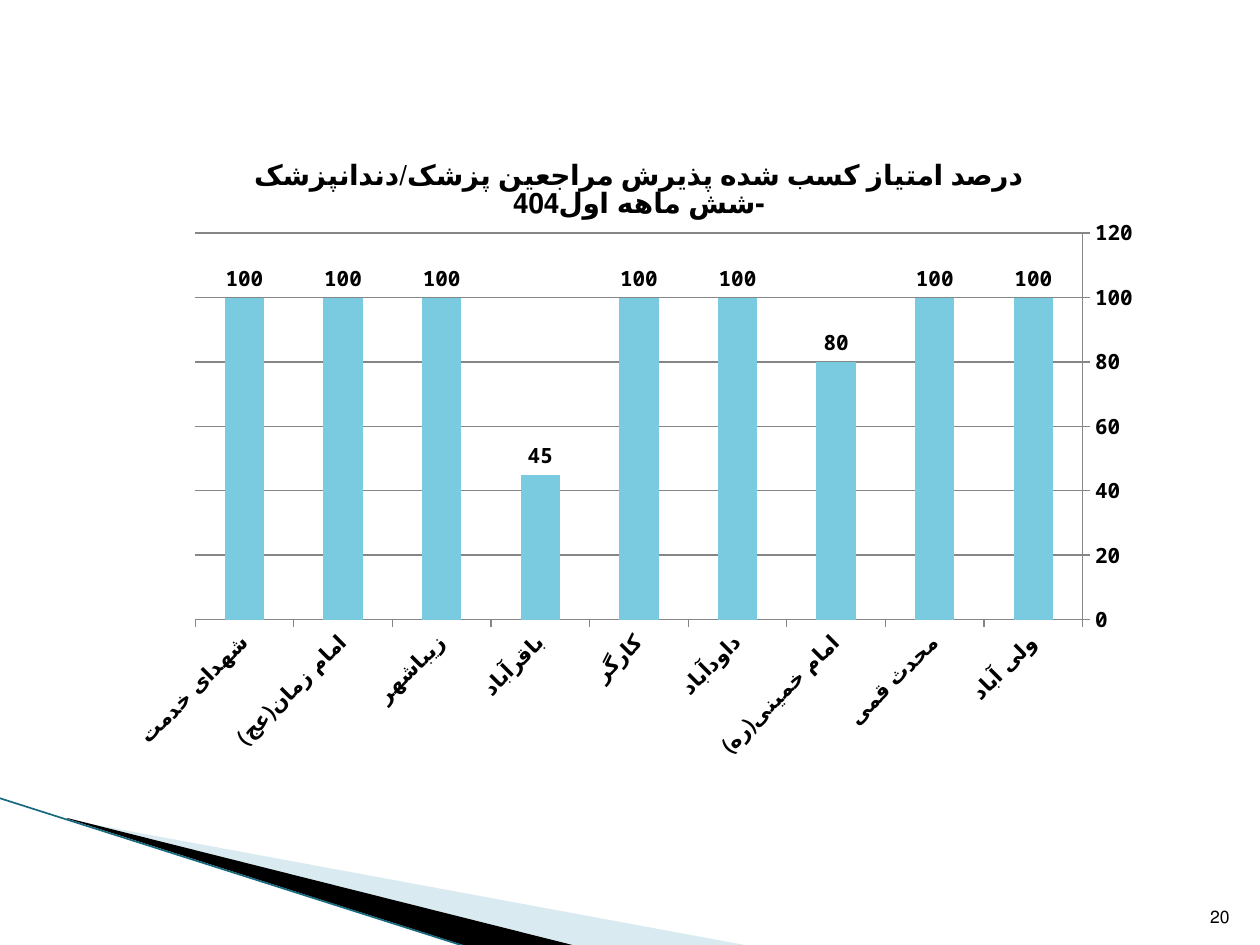
"""Build a slide with a column chart of admission scores by health centre."""
import dataclasses
import typing

import lxml.etree
import pptx
import pptx.chart.data
import pptx.dml.color
import pptx.enum.chart
import pptx.enum.shapes
import pptx.enum.text
import pptx.oxml
import pptx.oxml.ns
import pptx.util

EMU_PER_PX = 914400 / 126
FONT = "Noto Sans Mono"
BLACK = "000000"
GRID = "868686"
TITLE = "درصد امتیاز کسب شده پذیرش مراجعین پزشک/دندانپزشک -شش ماهه اول404"


@dataclasses.dataclass
class Wedge:
    points: list[tuple[int, int]]
    color: str
    opacity: int = 100


@dataclasses.dataclass
class Score:
    center: str
    percent: int


WEDGES = [
    Wedge([(69, 820), (750, 946), (575, 946), (69, 819)], "A0CBDC", 40),
    Wedge([(67, 818), (576, 946), (469, 947), (68, 819)], BLACK),
]
SCORES = [
    Score("ولی آباد", 100),
    Score("محدث قمی", 100),
    Score("امام خمینی(ره)", 80),
    Score("داودآباد", 100),
    Score("کارگر", 100),
    Score("باقرآباد", 45),
    Score("زیباشهر", 100),
    Score("امام زمان(عج)", 100),
    Score("شهدای خدمت", 100),
]


def px(length: int) -> pptx.util.Emu:
    return pptx.util.Emu(round(length * EMU_PER_PX))


def rgb(color: str) -> pptx.dml.color.RGBColor:
    return pptx.dml.color.RGBColor.from_string(color)


def set_font(font: typing.Any, size: int, bold: bool = False) -> None:
    font.name = FONT
    font.size = pptx.util.Pt(size)
    font.bold = bold
    font.color.rgb = rgb(BLACK)


def set_right_to_left(paragraph: typing.Any) -> None:
    paragraph._p.get_or_add_pPr().set("rtl", "1")


def set_line(line: typing.Any, color: str, width: float) -> None:
    line.color.rgb = rgb(color)
    line.width = pptx.util.Pt(width)


def add_wedge(slide: typing.Any, wedge: Wedge) -> None:
    first, *others = wedge.points
    builder = slide.shapes.build_freeform(*first, scale=EMU_PER_PX)
    builder.add_line_segments(others, close=True)
    shape = builder.convert_to_shape()
    shape.shadow.inherit = False
    shape.fill.solid()
    shape.fill.fore_color.rgb = rgb(wedge.color)
    shape.line.fill.background()
    if wedge.opacity < 100:
        color = shape._element.spPr.find(".//" + pptx.oxml.ns.qn("a:srgbClr"))
        alpha = lxml.etree.SubElement(color, pptx.oxml.ns.qn("a:alpha"))
        alpha.set("val", str(wedge.opacity * 1000))


def add_edge(slide: typing.Any) -> None:
    connector = slide.shapes.add_connector(
        pptx.enum.shapes.MSO_CONNECTOR.STRAIGHT, px(-1), px(798), px(467), px(947)
    )
    set_line(connector.line, "17697D", 0.95)
    lxml.etree.SubElement(connector._element.spPr, pptx.oxml.ns.qn("a:effectLst"))


def add_slide_number(slide: typing.Any) -> None:
    shape = slide.shapes.add_textbox(px(1192), px(883), px(50), px(50))
    frame = shape.text_frame
    frame.word_wrap = True
    frame.vertical_anchor = pptx.enum.text.MSO_ANCHOR.BOTTOM
    paragraph = frame.paragraphs[0]
    paragraph.text = "20"
    paragraph.alignment = pptx.enum.text.PP_ALIGN.RIGHT
    set_right_to_left(paragraph)
    set_font(paragraph.font, 10)


def place_plot(chart: typing.Any, **fractions: float) -> None:
    plot_area = chart._chartSpace.chart.plotArea
    for old in plot_area.findall(pptx.oxml.ns.qn("c:layout")):
        plot_area.remove(old)
    settings = {"layoutTarget": "inner", "xMode": "edge", "yMode": "edge", **fractions}
    children = "".join(f'<c:{name} val="{value}"/>' for name, value in settings.items())
    layout = pptx.oxml.parse_xml(
        f'<c:layout {pptx.oxml.ns.nsdecls("c")}>'
        f"<c:manualLayout>{children}</c:manualLayout></c:layout>"
    )
    plot_area.insert(0, layout)


def style_axis(axis: typing.Any) -> None:
    axis.major_tick_mark = pptx.enum.chart.XL_TICK_MARK.OUTSIDE
    axis.minor_tick_mark = pptx.enum.chart.XL_TICK_MARK.NONE
    set_font(axis.tick_labels.font, 12, True)
    set_line(axis.format.line, GRID, 0.75)


def add_score_chart(slide: typing.Any) -> None:
    data = pptx.chart.data.CategoryChartData()
    data.categories = [score.center for score in SCORES]
    data.add_series("Series 1", [score.percent for score in SCORES])
    chart = slide.shapes.add_chart(
        pptx.enum.chart.XL_CHART_TYPE.COLUMN_CLUSTERED,
        px(123), px(135), px(1032), px(655), data,
    ).chart
    set_font(chart.font, 18)
    chart.has_legend = False
    chart.has_title = True
    title = chart.chart_title.text_frame.paragraphs[0]
    title.text = TITLE
    set_right_to_left(title)
    set_font(title.font, 16, True)
    chart.chart_title.include_in_layout = False
    place_plot(chart, x=0.07, y=0.15, w=0.86, h=0.59)

    style_axis(chart.category_axis)
    chart.category_axis.reverse_order = True
    labels_body = chart.category_axis.tick_labels.font._element.getparent().getparent()
    body = labels_body.getparent().find(pptx.oxml.ns.qn("a:bodyPr"))
    body.set("rot", "-2700000")
    style_axis(chart.value_axis)
    chart.value_axis.minimum_scale = 0
    chart.value_axis.maximum_scale = 120
    chart.value_axis.major_unit = 20
    set_line(chart.value_axis.major_gridlines.format.line, GRID, 0.75)

    plot = chart.plots[0]
    plot.gap_width = 150
    plot.vary_by_categories = False
    series = plot.series[0]
    series.format.fill.solid()
    series.format.fill.fore_color.rgb = rgb("7ACBE0")
    labels = series.data_labels
    labels.show_value = True
    labels.position = pptx.enum.chart.XL_LABEL_POSITION.OUTSIDE_END
    set_font(labels.font, 12, True)


def main() -> None:
    presentation = pptx.Presentation()
    presentation.slide_width = px(1260)
    presentation.slide_height = px(945)
    slide = presentation.slides.add_slide(presentation.slide_layouts[6])
    for wedge in WEDGES:
        add_wedge(slide, wedge)
    add_edge(slide)
    add_slide_number(slide)
    add_score_chart(slide)
    presentation.save("out.pptx")


if __name__ == "__main__":
    main()
